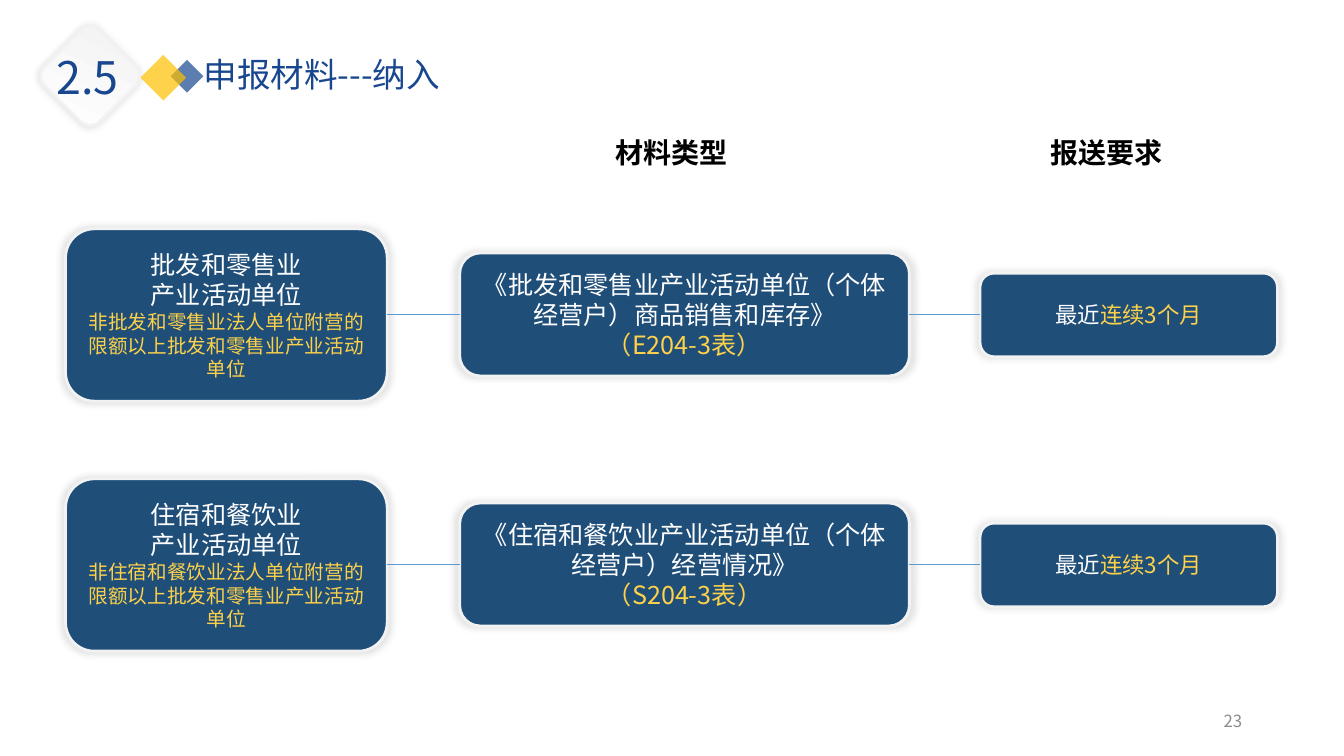
from lxml import etree
from pptx import Presentation
from pptx.dml.color import RGBColor
from pptx.enum.shapes import MSO_CONNECTOR, MSO_SHAPE
from pptx.enum.text import MSO_ANCHOR, PP_ALIGN
from pptx.oxml.ns import qn
from pptx.util import Pt

PX = 9144
FONT = "Noto Sans CJK SC"
HEADING_FONT = "Arial"

NAVY = RGBColor(0x1F, 0x4E, 0x79)
BLUE = RGBColor(0x18, 0x47, 0x8F)
LINK_BLUE = RGBColor(0x5B, 0x9B, 0xD5)
AMBER = RGBColor(0xFF, 0xC0, 0x00)
YELLOW = RGBColor(0xFD, 0xD1, 0x4A)
PALE = RGBColor(0xF2, 0xF2, 0xF2)
GREY = RGBColor(0x8C, 0x8C, 0x8C)
WHITE = RGBColor(0xFF, 0xFF, 0xFF)
BLACK = RGBColor(0x00, 0x00, 0x00)

RECT = MSO_SHAPE.RECTANGLE
ROUNDED = MSO_SHAPE.ROUNDED_RECTANGLE
STRAIGHT = MSO_CONNECTOR.STRAIGHT
LEFT, CENTER, RIGHT = PP_ALIGN.LEFT, PP_ALIGN.CENTER, PP_ALIGN.RIGHT
TOP, MIDDLE = MSO_ANCHOR.TOP, MSO_ANCHOR.MIDDLE

ROWS = [
    ("批发和零售业", "非批发和零售业法人单位附营的限额以上批发和零售业产业活动单位",
     "《批发和零售业产业活动单位（个体经营户）商品销售和库存》", "（E204-3表）"),
    ("住宿和餐饮业", "非住宿和餐饮业法人单位附营的限额以上批发和零售业产业活动单位",
     "《住宿和餐饮业产业活动单位（个体经营户）经营情况》", "（S204-3表）"),
]


def emu(*lengths):
    """Turn px lengths into EMU."""
    return [length * PX for length in lengths]


def style_font(para, size, color, name=FONT, bold=False):
    """Set the font of a whole paragraph, East Asian text included."""
    font = para.font
    font.size, font.name, font.bold = Pt(size), name, bold
    font.color.rgb = color
    latin = para._p.pPr.find(qn("a:defRPr")).find(qn("a:latin"))
    east_asian = etree.Element(qn("a:ea"), typeface=name)
    latin.addnext(east_asian)


def add_label(page, box, text, size, color, name=FONT, bold=False,
              align=LEFT, anchor=TOP, wrap=True):
    """Place one line of plain text in a box."""
    frame = page.shapes.add_textbox(*emu(*box)).text_frame
    frame.word_wrap, frame.vertical_anchor = wrap, anchor
    para = frame.paragraphs[0]
    para.text, para.alignment = text, align
    style_font(para, size, color, name, bold)


def add_raised(page, box):
    """Add a rounded shape with a pale outline and a soft glow-like shadow."""
    shape = page.shapes.add_shape(ROUNDED, *emu(*box))
    shape.shadow.inherit = False
    shape.line.color.rgb, shape.line.width = PALE, Pt(2)
    effects = shape._element.spPr.find(qn("a:effectLst"))
    shadow = etree.SubElement(effects, qn("a:outerShdw"), blurRad=str(Pt(5)),
                              dist="0", dir="0", sx="102000", sy="102000",
                              algn="ctr", rotWithShape="0")
    tint = etree.SubElement(shadow, qn("a:srgbClr"), val=str(BLACK))
    etree.SubElement(tint, qn("a:alpha"), val="11000")
    return shape


def add_diamond(page, box, color):
    """Add a translucent square standing on its corner."""
    shape = page.shapes.add_shape(RECT, *emu(*box))
    shape.shadow.inherit = False
    shape.rotation = 225
    shape.fill.solid()
    shape.fill.fore_color.rgb = color
    shape.line.fill.background()
    tint = shape._element.spPr.find(qn("a:solidFill"))[0]
    etree.SubElement(tint, qn("a:alpha"), val="70000")


def add_card(page, box, paragraphs):
    """Add a navy card; each paragraph is a size and its (text, color) spans."""
    card = add_raised(page, box)
    card.fill.solid()
    card.fill.fore_color.rgb = NAVY
    frame = card.text_frame
    frame.word_wrap, frame.vertical_anchor = True, MIDDLE
    for index, (size, spans) in enumerate(paragraphs):
        para = frame.add_paragraph() if index else frame.paragraphs[0]
        para.alignment = CENTER
        style_font(para, size, spans[0][1])
        for text, color in spans:
            span = para.add_run()
            span.text = text
            if len(spans) > 1:
                span.font.color.rgb = color


def add_link(page, start, end, middle):
    """Join two cards with a thin horizontal line."""
    link = page.shapes.add_connector(STRAIGHT, *emu(start, middle, end, middle))
    link.line.color.rgb, link.line.width = LINK_BLUE, Pt(0.5)
    etree.SubElement(link._element.spPr, qn("a:effectLst"))


def add_header(page, left, top):
    """Place the section number, its diamonds and the title."""
    add_diamond(page, (left + 128, top + 27, 23, 23), BLUE)
    add_label(page, (left + 146, top + 12, 455, 50), "申报材料---纳入", 24, BLUE)
    badge = add_raised(page, (left + 5, top, 77, 77))
    badge.rotation = 45
    badge.fill.gradient()
    badge.fill.gradient_angle = 110
    for stop, color in zip(badge.fill.gradient_stops, (WHITE, PALE)):
        stop.color.rgb = color
    add_label(page, (left, top + 7, 84, 64), "2.5", 32, BLUE, wrap=False)
    add_diamond(page, (left + 100, top + 24, 32, 32), AMBER)


def add_row(page, middle, row):
    """Place three linked cards, centred on one horizontal line."""
    industry, scope, material, form = row
    cards = [
        (65, 319, 171, [(18, [(industry, WHITE)]), (18, [("产业活动单位", WHITE)]),
                        (14, [(scope, YELLOW)])]),
        (456, 446, 122, [(18, [(material, WHITE)]), (18, [(form, YELLOW)])]),
        (972, 295, 83, [(16, [("最近", WHITE), ("连续3个月", YELLOW)])]),
    ]
    for left, width, height, paragraphs in cards:
        add_card(page, (left, middle - height // 2, width, height), paragraphs)
    for (left, width, *_), following in zip(cards, cards[1:]):
        add_link(page, left + width, following[0], middle)


def main():
    """Build the slide and save it."""
    deck = Presentation()
    deck.slide_width, deck.slide_height = emu(1333, 750)
    page = deck.slides.add_slide(deck.slide_layouts[6])
    add_label(page, (942, 695, 300, 40), "23", 12, GREY, align=RIGHT, anchor=MIDDLE)
    add_header(page, 46, 37)
    for left, width, text in ((601, 183, "材料类型"), (1032, 136, "报送要求")):
        add_label(page, (left, 130, width, 44), text, 20, BLACK, HEADING_FONT, True)
    for index, row in enumerate(ROWS):
        add_row(page, 312 + 248 * index, row)
    deck.save("out.pptx")


if __name__ == "__main__":
    main()
